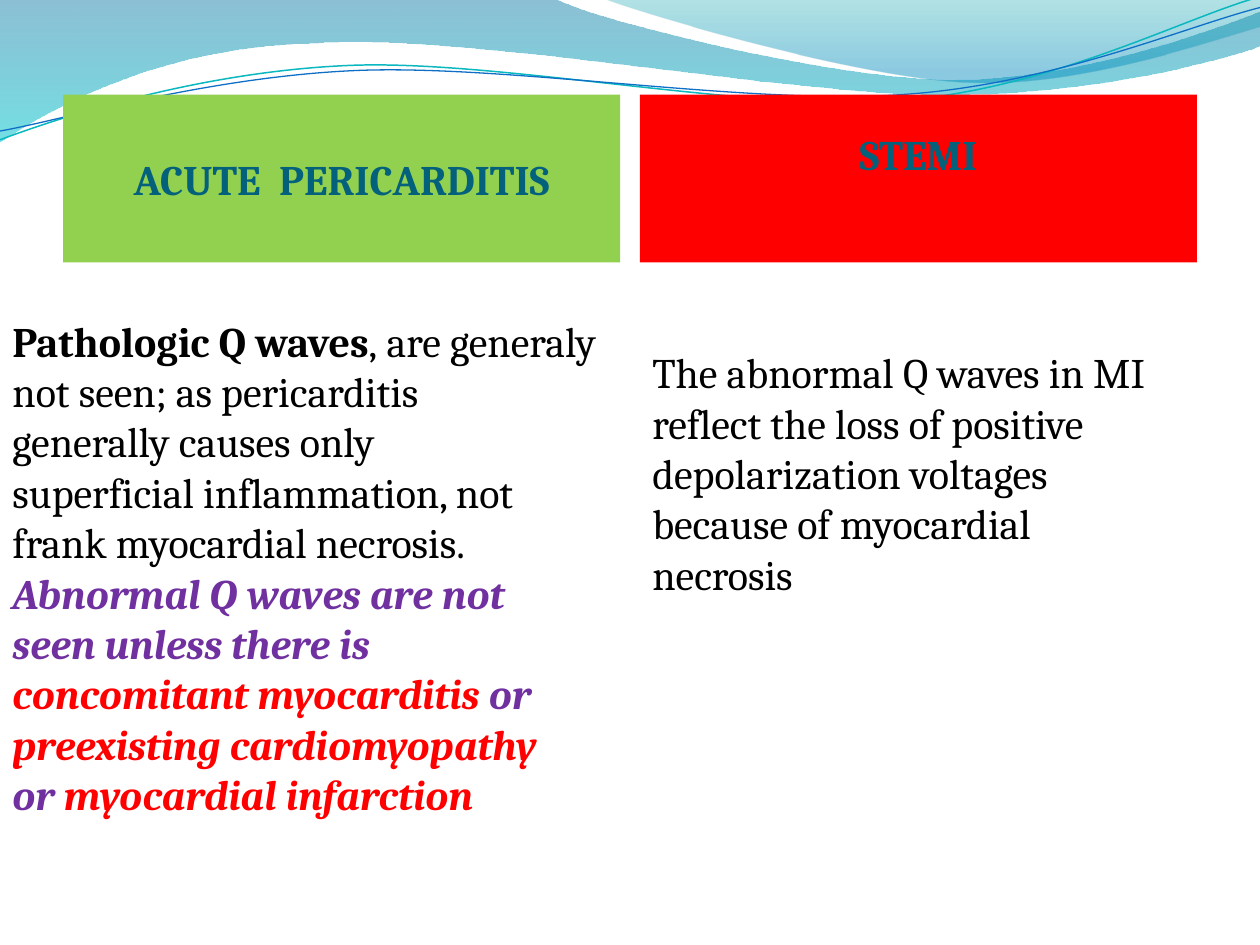
import pptx
import pptx.dml.color
import pptx.enum.text
import pptx.oxml
import pptx.oxml.ns
import pptx.util
from dataclasses import dataclass
from pptx.util import Cm


@dataclass(frozen=True)
class Theme:
    font: str = "Cambria"
    size: int = 24
    heading: str = "04617B"
    body: str = "000000"
    purple: str = "7030A0"
    red: str = "FF0000"
    green: str = "92D050"
    teal_line: str = "0AB8BF"
    blue_line: str = "0F6FC6"
    # Gradient stops: position, colour, opacity in percent
    wide_wave: tuple = ((0, "0074A1", 45), (100, "00C6CF", 55))
    right_wave: tuple = ((0, "00A1A9", 30), (80, "008BBF", 45))


THEME = Theme()
GRID = 0.0254  # cm per unit of the wave outlines

# Outlines: one point is a straight step, three points are a Bézier curve
WIDE_WAVE = [
    [(0, 0)], [(440, -1)],
    [(476, 17), (664, 63), (758, 63)], [(853, 63), (958, 26), (1000, 9)],
    [(1001, 36)],
    [(983, 44), (870, 76), (746, 75)], [(622, 75), (382, 28), (257, 34)],
    [(129, 36), (46, 83), (-1, 113)],
]
RIGHT_WAVE = [
    [(479, -1)],
    [(509, 11), (682, 62), (769, 65)], [(856, 69), (961, 32), (1000, 21)],
    [(1000, 0)],
]
TEAL_CURVE = [
    [(0, 111)],
    [(48, 93), (158, 57), (277, 52)], [(395, 47), (593, 89), (713, 80)],
    [(833, 71), (938, 15), (998, -2)],
]
BLUE_CURVE = [
    [(0, 104)],
    [(47, 96), (164, 61), (283, 56)], [(403, 51), (597, 84), (717, 75)],
    [(836, 67), (941, 21), (1000, 6)],
]


def rgb(code):
    return pptx.dml.color.RGBColor.from_string(code)


def add_outline(slide, outline, close):
    """Freeform whose three-point steps are turned into cubic curves."""
    start, *rest = [(Cm(x * GRID), Cm(y * GRID)) for step in outline for x, y in step]
    builder = slide.shapes.build_freeform(*start)
    builder.add_line_segments(rest, close=close)
    outline_shape = builder.convert_to_shape()
    outline_shape.shadow.inherit = False

    segments = iter(list(outline_shape.element.iter(pptx.oxml.ns.qn("a:lnTo"))))
    for step in outline[1:]:
        lines = [next(segments) for _ in step]
        if len(lines) == 3:
            curve = pptx.oxml.parse_xml(f'<a:cubicBezTo {pptx.oxml.ns.nsdecls("a")}/>')
            lines[0].addprevious(curve)
            for line in lines:
                curve.append(line[0])
                line.getparent().remove(line)
    return outline_shape


def add_wave(slide, outline, stops):
    wave = add_outline(slide, outline, close=True)
    wave.line.fill.background()
    wave.fill.gradient()
    wave.fill.gradient_angle = 270
    for stop, (position, color, _) in zip(wave.fill.gradient_stops, stops):
        stop.position = position / 100
        stop.color.rgb = rgb(color)
    colors = wave.element.spPr.iter(pptx.oxml.ns.qn("a:srgbClr"))
    for color_element, (_, _, opacity) in zip(colors, stops):
        color_element.append(pptx.oxml.parse_xml(
            f'<a:alpha {pptx.oxml.ns.nsdecls("a")} val="{opacity * 1000}"/>'))


def add_curve(slide, outline, color, width):
    curve = add_outline(slide, outline, close=False)
    curve.fill.background()
    curve.line.color.rgb = rgb(color)
    curve.line.width = pptx.util.Pt(width)


def add_text(paragraph, text, color=THEME.body, bold=False, italic=False):
    run = paragraph.add_run()
    run.text = text
    run.font.name = THEME.font
    run.font.size = pptx.util.Pt(THEME.size)
    run.font.bold = bold
    run.font.italic = italic
    run.font.color.rgb = rgb(color)


def place(placeholder, left, top, width, height, insets, anchor):
    placeholder.left, placeholder.top = Cm(left), Cm(top)
    placeholder.width, placeholder.height = Cm(width), Cm(height)
    frame = placeholder.text_frame
    frame.word_wrap = True
    frame.auto_size = pptx.enum.text.MSO_AUTO_SIZE.NONE
    frame.vertical_anchor = anchor
    (frame.margin_left, frame.margin_top,
     frame.margin_right, frame.margin_bottom) = map(Cm, insets)
    return frame.paragraphs[0]


def fill_heading(placeholder, text, left, color, bottom_inset=0):
    paragraph = place(placeholder, left, 1.91, 11.23, 3.38, (0.13, 0, 0.13, bottom_inset),
                      pptx.enum.text.MSO_ANCHOR.MIDDLE)
    placeholder.fill.solid()
    placeholder.fill.fore_color.rgb = rgb(color)
    paragraph.alignment = pptx.enum.text.PP_ALIGN.CENTER
    paragraph.space_before = pptx.util.Pt(0)
    add_text(paragraph, text, color=THEME.heading, bold=True)


def fill_body(placeholder, box, runs):
    """Right-to-left paragraph, aligned left, whose hanging indent is on the right."""
    paragraph = place(placeholder, *box, (0.25, 0, 0.25, 0.13),
                      pptx.enum.text.MSO_ANCHOR.TOP)
    paragraph.alignment = pptx.enum.text.PP_ALIGN.LEFT
    paragraph.space_before = pptx.util.Pt(4.8)
    properties = paragraph._p.get_or_add_pPr()
    properties.set("rtl", "1")
    properties.set("marL", str(Cm(0.76)))
    properties.set("indent", str(Cm(-0.76)))
    properties.append(pptx.oxml.parse_xml(f'<a:buNone {pptx.oxml.ns.nsdecls("a")}/>'))
    for text, style in runs:
        add_text(paragraph, text, **style)


def main():
    presentation = pptx.Presentation()
    presentation.slide_width, presentation.slide_height = Cm(25.4), Cm(19.05)
    slide = presentation.slides.add_slide(presentation.slide_layouts.get_by_name("Comparison"))
    title, left_heading, left_body, right_heading, right_body = slide.placeholders
    title.element.getparent().remove(title.element)

    add_wave(slide, WIDE_WAVE, THEME.wide_wave)
    add_wave(slide, RIGHT_WAVE, THEME.right_wave)
    add_curve(slide, TEAL_CURVE, THEME.teal_line, 0.85)
    add_curve(slide, BLUE_CURVE, THEME.blue_line, 0.75)
    for column in (left_heading, right_heading, left_body, right_body):
        column.element.getparent().append(column.element)  # in front of the waves

    fill_heading(left_heading, "ACUTE  PERICARDITIS", 1.27, THEME.green)
    fill_heading(right_heading, "STEMI", 12.9, THEME.red, bottom_inset=1)

    purple = dict(color=THEME.purple, bold=True, italic=True)
    red = dict(color=THEME.red, bold=True, italic=True)
    fill_body(left_body, (0, 6.35, 12.29, 12.7), [
        ("Pathologic Q waves", dict(bold=True)),
        (", are generaly not seen; as pericarditis generally causes only superficial "
         "inflammation, not frank myocardial necrosis. ", {}),
        ("Abnormal Q waves are not seen unless there is ", purple),
        ("concomitant myocarditis ", red),
        ("or ", purple),
        ("preexisting cardiomyopathy ", red),
        ("or ", purple),
        ("myocardial infarction", red),
    ])
    fill_body(right_body, (12.9, 6.99, 11.23, 10.69), [
        ("The abnormal Q waves in MI reflect the loss of positive depolarization voltages "
         "because of myocardial necrosis", {}),
    ])
    presentation.save("out.pptx")


if __name__ == "__main__":
    main()
